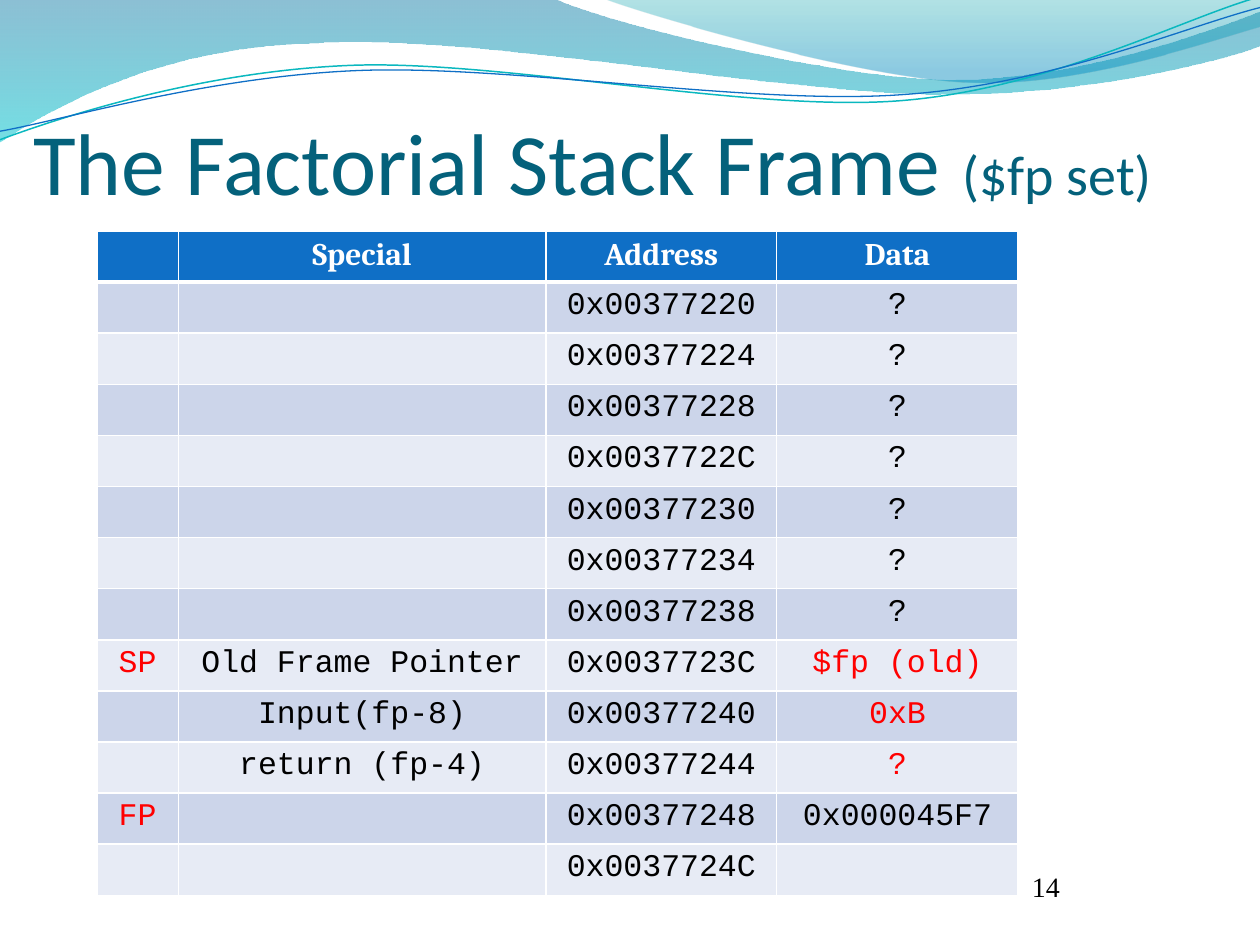
from lxml import etree
from pptx import Presentation
from pptx.dml.color import RGBColor
from pptx.enum.text import MSO_ANCHOR, PP_ALIGN
from pptx.oxml.ns import qn
from pptx.util import Pt

CENTER, LEFT = PP_ALIGN.CENTER, PP_ALIGN.LEFT
TOP, BOTTOM = MSO_ANCHOR.TOP, MSO_ANCHOR.BOTTOM

WHITE = RGBColor(0xFF, 0xFF, 0xFF)
BLACK = RGBColor(0x00, 0x00, 0x00)
RED = RGBColor(0xFF, 0x00, 0x00)
BLUE = RGBColor(0x0F, 0x6F, 0xC6)
TEAL = RGBColor(0x0A, 0xB8, 0xBF)
TITLE_BLUE = RGBColor(0x04, 0x61, 0x7B)
BAND_DARK = RGBColor(0xCC, 0xD5, 0xEA)
BAND_LIGHT = RGBColor(0xE7, 0xEB, 0xF5)
WAVE_NAVY = RGBColor(0x00, 0x74, 0xA1)
WAVE_CYAN = RGBColor(0x00, 0xC6, 0xCF)
WAVE_GREEN = RGBColor(0x00, 0xA1, 0xA9)
WAVE_SKY = RGBColor(0x00, 0x8B, 0xBF)

# Each wave: start point, then segments of one point (straight) or three (cubic)
WIDE_WAVE = ((0, 0), [
    [(316.8, -0.7)],
    [(342.7, 12.2), (478.1, 45.4), (545.8, 45.4)],
    [(614.2, 45.4), (689.8, 18.7), (720, 6.5)],
    [(720.7, 25.9)],
    [(707.8, 31.7), (626.4, 54.7), (537.1, 54)],
    [(447.8, 54), (275, 20.2), (185, 24.5)],
    [(92.9, 25.9), (33.1, 59.8), (-0.7, 81.4)],
    [(0, 0)],
])
RIGHT_WAVE = ((344.9, -0.7), [
    [(366.5, 7.9), (491, 44.6), (553.7, 46.8)],
    [(616.3, 49.7), (691.9, 23), (720, 15.1)],
    [(720, 0)],
    [(344.9, -0.7)],
])
# The two thin curves are drawn level, then turned
TEAL_CURVE = ((-1.4, 62.9), [
    [(33.8, 51.7), (114.1, 29.4), (199.8, 29.9)],
    [(284.9, 30.3), (425.8, 67.3), (512.4, 64.9)],
    [(599, 62.4), (676.4, 25.7), (720.2, 15.5)],
])
BLUE_CURVE = ((-1.1, 58), [
    [(32.9, 53.8), (118.3, 32.5), (204.1, 33)],
    [(290.6, 33.4), (428.9, 63.8), (515.5, 61.4)],
    [(601.3, 59.6), (678.4, 30.1), (721.4, 21.3)],
])
CURVE_TURN = -2.7

HEADERS = ["", "Special", "Address", "Data"]
COLUMN_WIDTHS = [46.5, 210, 132, 138]
ROW_HEIGHT = 29.2
FIRST_ADDRESS = 0x00377220
# Pointer, special use, data and data colour, one row per word of memory
STACK = [("", "", "?", BLACK)] * 7 + [
    ("SP", "Old Frame Pointer", "$fp (old)", RED),
    ("", "Input(fp-8)", "0xB", RED),
    ("", "return (fp-4)", "?", RED),
    ("FP", "", "0x000045F7", BLACK),
    ("", "", "", BLACK),
]


def add_outline(parent, wave, close):
    """Build the outline, joining each triple of points into a cubic curve."""
    start, segments = wave
    points = [(Pt(x), Pt(y)) for segment in segments for x, y in segment]
    builder = parent.shapes.build_freeform(Pt(start[0]), Pt(start[1]))
    builder.add_line_segments(points, close=close)
    shape = builder.convert_to_shape()
    shape.shadow.inherit = False
    lines = iter(list(shape._element.iter(qn("a:lnTo"))))
    for segment in segments:
        steps = [next(lines) for _ in segment]
        if len(steps) == 3:
            curve = etree.Element(qn("a:cubicBezTo"))
            steps[0].addprevious(curve)
            for step in steps:
                curve.append(step[0])
                step.getparent().remove(step)
    return shape


def add_wave(page, wave, stops):
    shape = add_outline(page, wave, True)
    shape.line.fill.background()
    shape.fill.gradient()
    shape.fill.gradient_angle = 270
    for stop, (position, color, _) in zip(shape.fill.gradient_stops, stops):
        stop.position = position
        stop.color.rgb = color
    tags = shape._element.spPr.iter(qn("a:srgbClr"))
    for tag, (_, _, opacity) in zip(tags, stops):
        etree.SubElement(tag, qn("a:alpha"), val=str(opacity * 1000))


def add_curve(group, wave, color, width):
    shape = add_outline(group, wave, False)
    shape.rotation = CURVE_TURN
    shape.fill.background()
    shape.line.color.rgb = color
    shape.line.width = Pt(width)


def add_span(para, text, color, **font_values):
    span = para.add_run()
    span.text = text
    span.font.color.rgb = color
    for name, value in font_values.items():
        setattr(span.font, name, value)


def add_text(page, area, spans, frame_values):
    box = page.shapes.add_textbox(*map(Pt, area))
    frame = box.text_frame
    for name, value in {"word_wrap": True, **frame_values}.items():
        setattr(frame, name, value)
    para = frame.paragraphs[0]
    para.alignment = LEFT
    for text, color, font, size in spans:
        add_span(para, text, color, name=font, size=Pt(size))


def set_borders(cell, widths):
    properties = cell._tc.get_or_add_tcPr()
    for index, (side, width) in enumerate(widths.items()):
        line = etree.Element(qn(f"a:ln{side}"), w=str(Pt(width)))
        solid = etree.SubElement(line, qn("a:solidFill"))
        etree.SubElement(solid, qn("a:srgbClr"), val=str(WHITE))
        properties.insert(index, line)


def fill_cell(cell, text, fill, borders, color, font, bold):
    cell.fill.solid()
    cell.fill.fore_color.rgb = fill
    set_borders(cell, borders)
    para = cell.text_frame.paragraphs[0]
    para.alignment = CENTER
    if text:
        add_span(para, text, color, name=font, size=Pt(18), bold=bold)


def add_stack_table(page):
    row_count = len(STACK) + 1
    frame = page.shapes.add_table(
        row_count, len(HEADERS), Pt(55.4), Pt(132),
        Pt(sum(COLUMN_WIDTHS)), Pt(ROW_HEIGHT * row_count))
    table = frame.table
    for column, width in zip(table.columns, COLUMN_WIDTHS):
        column.width = Pt(width)
    for row in table.rows:
        row.height = Pt(ROW_HEIGHT)

    # Header row
    for cell, text in zip(table.rows[0].cells, HEADERS):
        fill_cell(cell, text, BLUE, {"L": 1, "R": 1, "T": 1, "B": 3},
                  WHITE, "Cambria", True)

    # Memory rows
    for index, (pointer, special, data, data_color) in enumerate(STACK):
        address = f"0x{FIRST_ADDRESS + 4 * index:08X}"
        values = [(pointer, RED), (special, BLACK), (address, BLACK), (data, data_color)]
        fill = BAND_LIGHT if index % 2 else BAND_DARK
        borders = {"L": 1, "R": 1, "T": 1 if index else 3, "B": 1}
        for cell, (text, color) in zip(table.rows[index + 1].cells, values):
            fill_cell(cell, text, fill, borders, color, "Courier New", False)


def main():
    deck = Presentation()
    deck.slide_width, deck.slide_height = Pt(720), Pt(540)
    page = deck.slides.add_slide(deck.slide_layouts[6])

    # Waves along the top
    add_wave(page, WIDE_WAVE, [(0, WAVE_NAVY, 45), (1, WAVE_CYAN, 55)])
    add_wave(page, RIGHT_WAVE, [(0, WAVE_GREEN, 30), (0.8, WAVE_SKY, 45)])
    curves = page.shapes.add_group_shape()
    add_curve(curves, TEAL_CURVE, TEAL, 0.85)
    add_curve(curves, BLUE_CURVE, BLUE, 0.75)

    # Slide number
    no_margins = {f"margin_{side}": 0 for side in ("left", "top", "right", "bottom")}
    add_text(page, (589.7, 486, 78, 30), [("14", BLACK, "Times New Roman", 16)],
             {"vertical_anchor": BOTTOM, **no_margins})

    # Title
    add_text(page, (12, 54, 684, 48), [
        ("The Factorial Stack Frame", TITLE_BLUE, "Calibri", 50),
        (" ", TITLE_BLUE, "Calibri", 54),
        ("($fp set)", TITLE_BLUE, "Calibri", 32),
    ], {"vertical_anchor": TOP})

    add_stack_table(page)
    deck.save("out.pptx")


if __name__ == "__main__":
    main()
